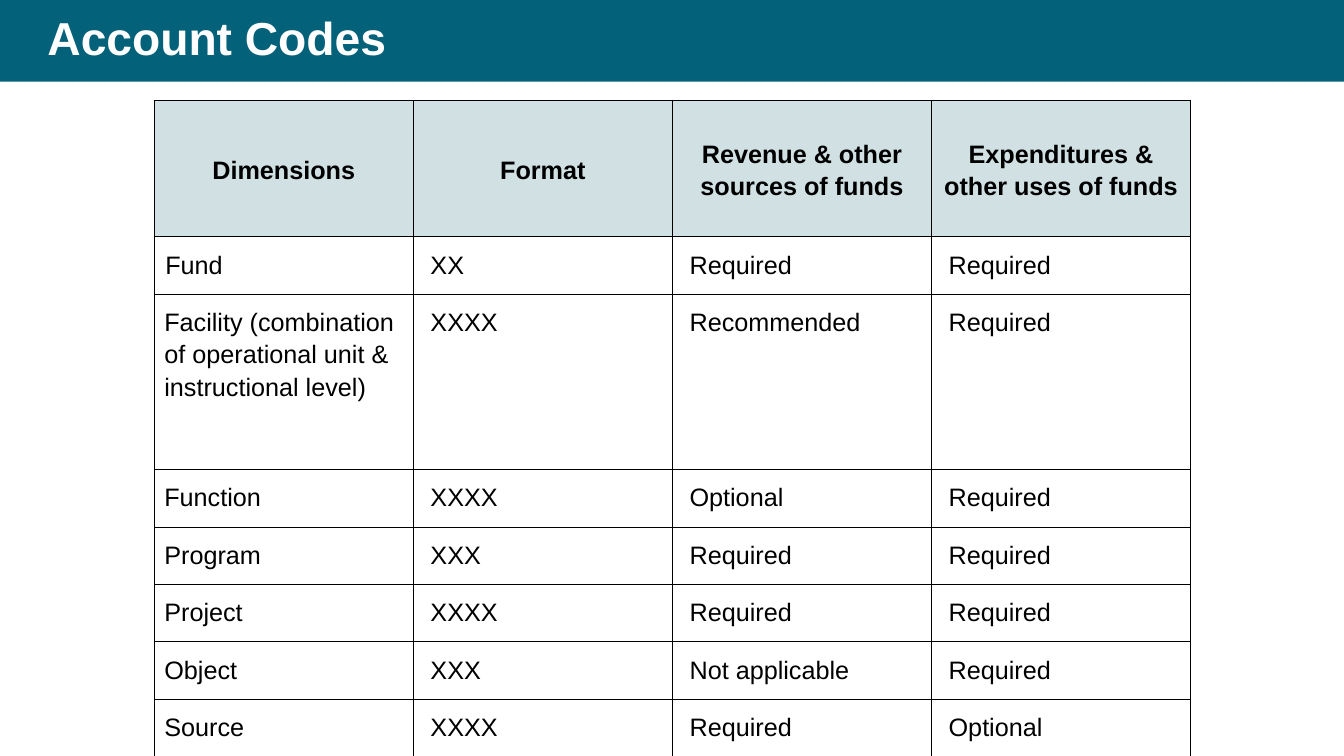
from dataclasses import dataclass

from lxml import etree
from pptx import Presentation
from pptx.dml.color import RGBColor
from pptx.enum.shapes import MSO_SHAPE
from pptx.enum.text import MSO_ANCHOR, MSO_AUTO_SIZE, PP_ALIGN
from pptx.oxml.ns import qn
from pptx.util import Inches, Pt

RECT = MSO_SHAPE.RECTANGLE
TOP, MIDDLE = MSO_ANCHOR.TOP, MSO_ANCHOR.MIDDLE
LEFT, CENTER = PP_ALIGN.LEFT, PP_ALIGN.CENTER
NO_FIT = MSO_AUTO_SIZE.NONE
TITLE_ONLY = 5


@dataclass(frozen=True)
class Theme:
    font: str = "Arial"
    band: str = "03617A"
    title: str = "FFFFFF"
    text: str = "000000"
    header: str = "D0E0E3"
    border: str = "000000"
    border_pt: float = 0.75
    title_pt: int = 33
    body_pt: int = 18


HEADERS = ["Dimensions", "Format", "Revenue & other sources of funds",
           "Expenditures & other uses of funds"]
CODES = [
    ["Fund", "XX", "Required", "Required"],
    ["Facility (combination of operational unit & instructional level)",
     "XXXX", "Recommended", "Required"],
    ["Function", "XXXX", "Optional", "Required"],
    ["Program", "XXX", "Required", "Required"],
    ["Project", "XXXX", "Required", "Required"],
    ["Object", "XXX", "Not applicable", "Required"],
    ["Source", "XXXX", "Required", "Optional"],
]
ROW_HEIGHTS = [1.35, 0.57, 1.74] + [0.57] * 5
COLUMN_WIDTH = 2.57


def apply(target, values):
    for name, value in values.items():
        setattr(target, name, value)


class SlideBuilder:
    def __init__(self, slide, theme):
        self.s = slide
        self.theme = theme

    def add_text(self, tf, text, size, color, bold, **layout):
        p = tf.paragraphs[0]
        apply(p, layout)
        r = p.add_run()
        r.text = text
        apply(r.font, {"name": self.theme.font, "size": Pt(size), "bold": bold})
        r.font.color.rgb = RGBColor.from_string(color)
        return p

    def title(self, text, left, top, width, height):
        sp = self.s.shapes.title
        apply(sp, {"left": Inches(left), "top": Inches(top),
                   "width": Inches(width), "height": Inches(height)})
        tf = sp.text_frame
        apply(tf, {"vertical_anchor": MIDDLE, "word_wrap": True,
                   "auto_size": NO_FIT})
        self.add_text(tf, text, self.theme.title_pt, self.theme.title, True,
                      alignment=LEFT, line_spacing=0.9)

    def band(self, left, top, width, height):
        sp = self.s.shapes.add_shape(RECT, Inches(left), Inches(top),
                                     Inches(width), Inches(height))
        sp.shadow.inherit = False
        sp.fill.solid()
        sp.fill.fore_color.rgb = RGBColor.from_string(self.theme.band)
        sp.line.fill.background()
        self.s.shapes.title._element.addprevious(sp._element)

    def borders(self, cell):
        tcPr = cell._tc.get_or_add_tcPr()
        for i, side in enumerate(("a:lnL", "a:lnR", "a:lnT", "a:lnB")):
            ln = etree.Element(qn(side), w=str(Pt(self.theme.border_pt)))
            fill = etree.SubElement(ln, qn("a:solidFill"))
            etree.SubElement(fill, qn("a:srgbClr"), val=self.theme.border)
            tcPr.insert(i, ln)

    def cell(self, cell, text, header, indent):
        apply(cell, {f"margin_{side}": Inches(0.1)
                     for side in ("left", "right", "top", "bottom")})
        cell.vertical_anchor = MIDDLE if header else TOP
        if header:
            cell.fill.solid()
            cell.fill.fore_color.rgb = RGBColor.from_string(self.theme.header)
        else:
            cell.fill.background()
        self.borders(cell)
        p = self.add_text(cell.text_frame, text, self.theme.body_pt,
                          self.theme.text, header, line_spacing=1.15,
                          alignment=CENTER if header else LEFT)
        if indent:
            p._p.get_or_add_pPr().set("marL", str(Inches(indent)))

    def table(self, rows, left, top, column_width, heights):
        columns = len(rows[0])
        table = self.s.shapes.add_table(
            len(rows), columns, Inches(left), Inches(top),
            Inches(column_width * columns), Inches(sum(heights))).table
        apply(table, {"first_row": False, "horz_banding": False})
        for column in table.columns:
            column.width = Inches(column_width)
        for i, (row, height) in enumerate(zip(rows, heights)):
            table.rows[i].height = Inches(height)
            for j, text in enumerate(row):
                first = 0.01 if i == 1 else 0
                indent = 0 if i == 0 else 0.07 if j else first
                self.cell(table.cell(i, j), text, i == 0, indent)


def main():
    prs = Presentation()
    apply(prs, {"slide_width": Inches(13.33), "slide_height": Inches(7.5)})
    s = prs.slides.add_slide(prs.slide_layouts[TITLE_ONLY])
    builder = SlideBuilder(s, Theme())
    builder.band(0, 0, 13.33, 0.81)
    builder.title("Account Codes", 0.37, 0, 12.32, 0.81)
    builder.table([HEADERS] + CODES, 1.53, 1, COLUMN_WIDTH, ROW_HEIGHTS)
    prs.save("out.pptx")


if __name__ == "__main__":
    main()
